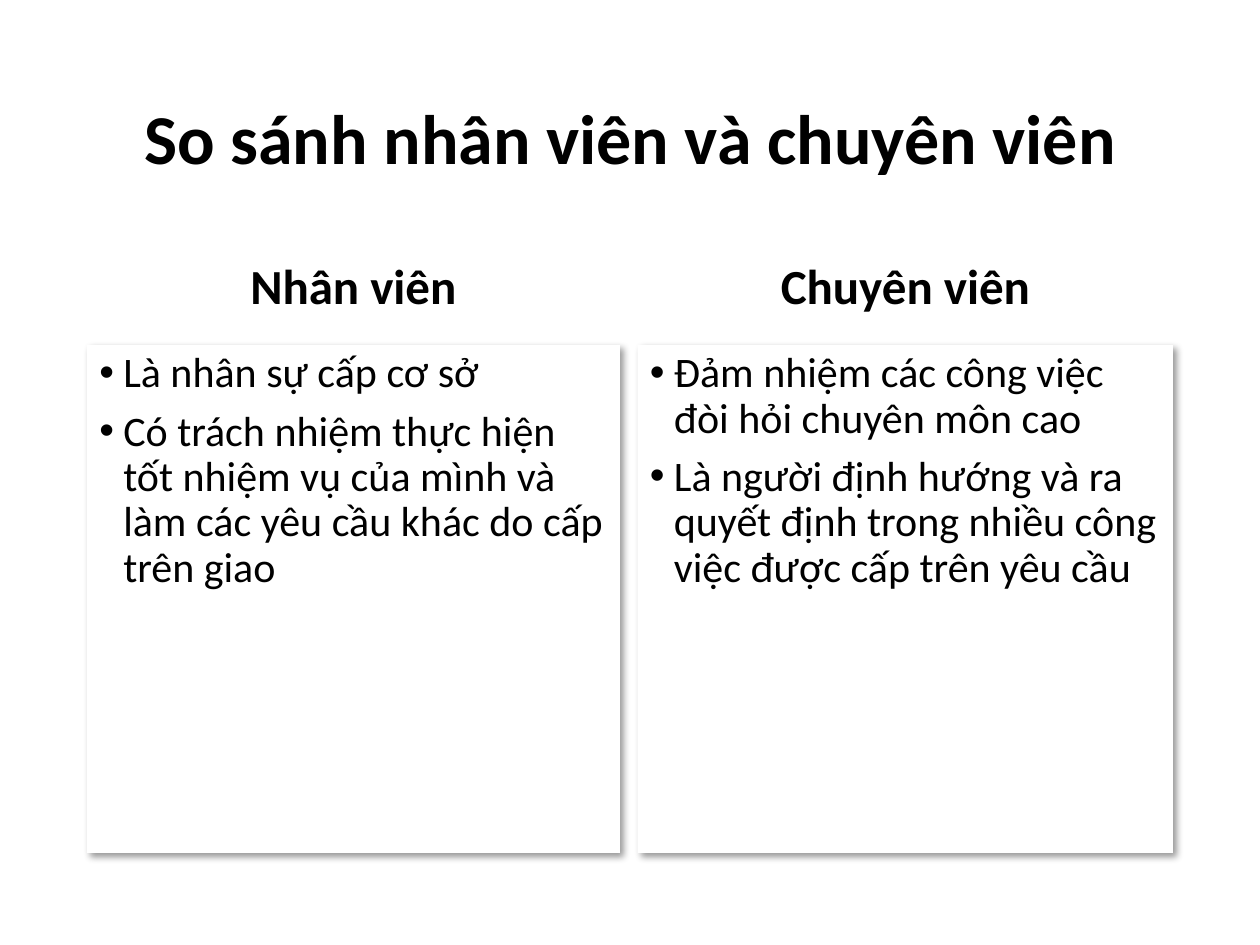
from dataclasses import dataclass

from lxml import etree
from pptx import Presentation
from pptx.dml.color import RGBColor
from pptx.enum.shapes import MSO_SHAPE
from pptx.enum.text import MSO_ANCHOR, PP_ALIGN
from pptx.oxml.ns import qn
from pptx.util import Inches, Pt

RECTANGLE = MSO_SHAPE.RECTANGLE
TOP, MIDDLE = MSO_ANCHOR.TOP, MSO_ANCHOR.MIDDLE
LEFT, CENTER = PP_ALIGN.LEFT, PP_ALIGN.CENTER


@dataclass(frozen=True)
class Theme:
    """Colours, font and type sizes of the slide."""

    font: str = "Calibri"
    text: RGBColor = RGBColor(0, 0, 0)
    panel: RGBColor = RGBColor(255, 255, 255)
    shadow: str = "000000"
    title_size: int = 40
    heading_size: int = 28
    body_size: int = 24


THEME = Theme()
MARGIN = 0.69
HEADING_TOP, HEADING_HEIGHT = 1.84, 0.9
PANEL_TOP, PANEL_HEIGHT = HEADING_TOP + HEADING_HEIGHT, 4.03
COLUMNS = [
    (MARGIN, 4.23, "Nhân viên", [
        "Là nhân sự cấp cơ sở",
        "Có trách nhiệm thực hiện tốt nhiệm vụ của mình và làm các yêu cầu khác do cấp trên giao",
    ]),
    (5.06, 4.25, "Chuyên viên", [
        "Đảm nhiệm các công việc đòi hỏi chuyên môn cao",
        "Là người định hướng và ra quyết định trong nhiều công việc được cấp trên yêu cầu",
    ]),
]


def apply_format(target, values):
    """Set every attribute named in the dict on the target."""
    for name, value in values.items():
        setattr(target, name, value)


def write_paragraph(paragraph, text, size, bold, alignment, space_before):
    """Fill a paragraph with one formatted run."""
    apply_format(paragraph, {
        "alignment": alignment, "line_spacing": 0.9, "space_before": Pt(space_before),
    })
    run = paragraph.add_run()
    run.text = text
    apply_format(run.font, {"name": THEME.font, "size": Pt(size), "bold": bold})
    run.font.color.rgb = THEME.text


def add_bullet(paragraph):
    """Give a paragraph a round bullet with a hanging indent."""
    properties = paragraph._p.get_or_add_pPr()
    properties.set("marL", str(Inches(0.19)))
    properties.set("indent", str(Inches(-0.19)))
    etree.SubElement(properties, qn("a:buFont"), typeface="Arial")
    etree.SubElement(properties, qn("a:buChar"), char="•")


def add_shadow(shape):
    """Cast a soft shadow to the lower right of a shape."""
    shape.shadow.inherit = False
    effects = shape.element.spPr.find(qn("a:effectLst"))
    shadow = etree.SubElement(
        effects, qn("a:outerShdw"), blurRad=str(Pt(4)), dist=str(Pt(3)),
        dir=str(45 * 60000), algn="tl", rotWithShape="0",
    )
    color = etree.SubElement(shadow, qn("a:srgbClr"), val=THEME.shadow)
    etree.SubElement(color, qn("a:alpha"), val="40000")


def add_heading(slide, box, text, size, space_before=0):
    """Add a bold centred line of text."""
    shape = slide.shapes.add_textbox(*map(Inches, box))
    frame = shape.text_frame
    apply_format(frame, {"word_wrap": True, "vertical_anchor": MIDDLE})
    write_paragraph(frame.paragraphs[0], text, size, True, CENTER, space_before)


def add_panel(slide, box, items):
    """Add a shadowed panel holding a bulleted list."""
    shape = slide.shapes.add_shape(RECTANGLE, *map(Inches, box))
    shape.fill.solid()
    shape.fill.fore_color.rgb = THEME.panel
    shape.line.fill.background()
    add_shadow(shape)
    frame = shape.text_frame
    apply_format(frame, {"word_wrap": True, "vertical_anchor": TOP})
    for index, item in enumerate(items):
        paragraph = frame.add_paragraph() if index else frame.paragraphs[0]
        write_paragraph(paragraph, item, THEME.body_size, False, LEFT, 7.5)
        add_bullet(paragraph)


def main():
    """Build and save the comparison slide."""
    presentation = Presentation()
    apply_format(presentation, {"slide_width": Inches(10), "slide_height": Inches(7.5)})
    slide = presentation.slides.add_slide(presentation.slide_layouts[6])
    add_heading(slide, (MARGIN, 0.4, 8.62, 1.45),
                "So sánh nhân viên và chuyên viên", THEME.title_size)
    for left, width, heading, items in COLUMNS:
        add_heading(slide, (left, HEADING_TOP, width, HEADING_HEIGHT),
                    heading, THEME.heading_size, 7.5)
        add_panel(slide, (left, PANEL_TOP, width, PANEL_HEIGHT), items)
    presentation.save("out.pptx")


if __name__ == "__main__":
    main()
